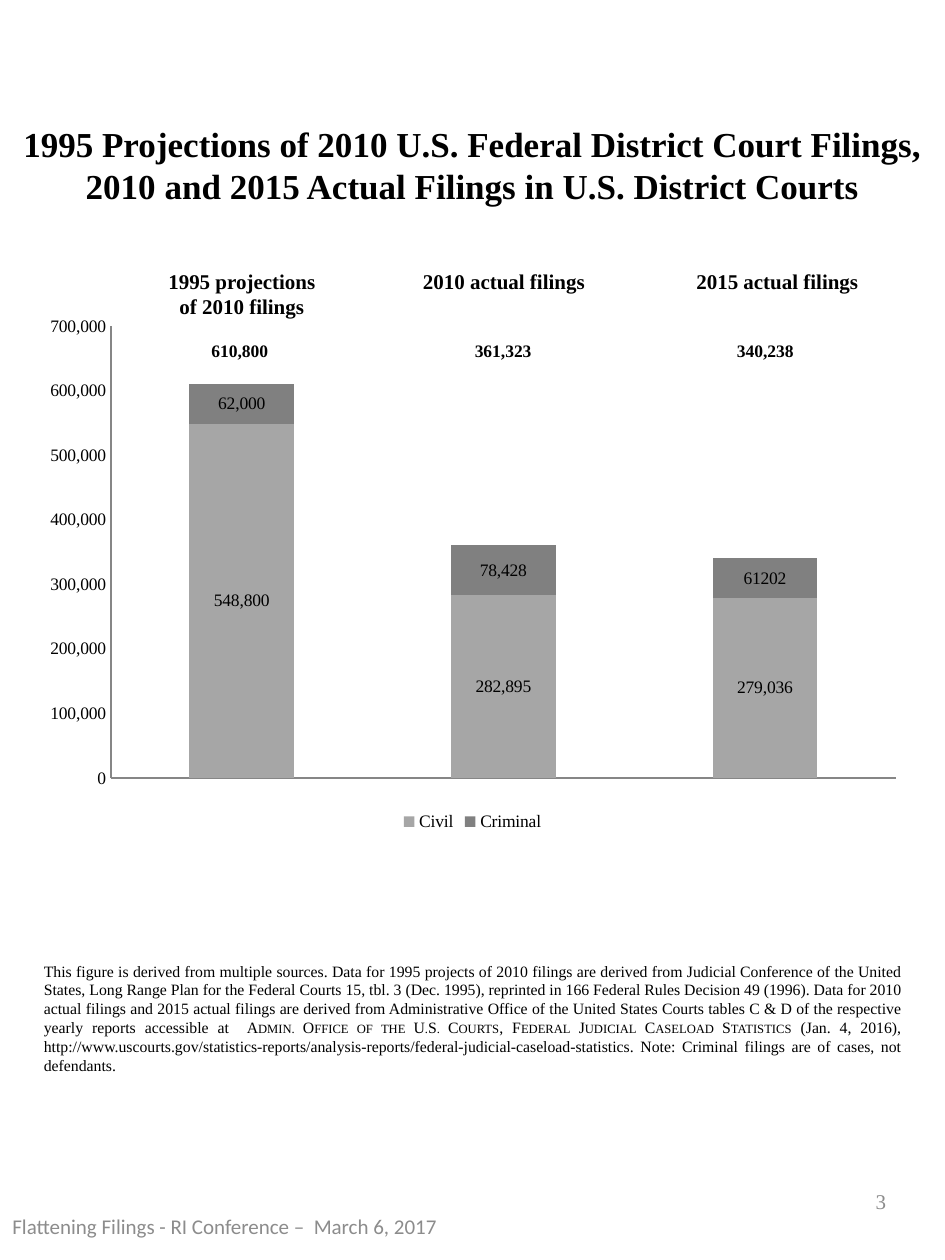
"""Build the slide comparing projected and actual federal district court filings."""
from dataclasses import dataclass
from typing import NamedTuple

from lxml.etree import SubElement
from pptx import Presentation
from pptx.chart.chart import Chart
from pptx.chart.data import CategoryChartData
from pptx.dml.color import RGBColor
from pptx.enum.chart import XL_CHART_TYPE, XL_LEGEND_POSITION, XL_TICK_LABEL_POSITION, XL_TICK_MARK
from pptx.enum.text import MSO_ANCHOR, PP_ALIGN
from pptx.oxml.ns import qn
from pptx.slide import Slide
from pptx.util import Inches, Pt


@dataclass(frozen=True)
class Theme:
    serif: str = "Times New Roman"
    sans: str = "Calibri"
    ink: str = "000000"
    muted: str = "8C8C8C"
    axis: str = "868686"
    title: int = 20
    heading: int = 12
    label: int = 10
    note: int = 9


class Box(NamedTuple):
    left: float
    top: float
    width: float
    height: float


class Run(NamedTuple):
    text: str
    small_caps: bool = False


class Column(NamedTuple):
    heading: str
    total: str
    heading_box: Box
    total_left: float


class Series(NamedTuple):
    name: str
    values: tuple[int, ...]
    color: str
    number_format: str
    point_labels: tuple[str, ...] = ()


THEME = Theme()
COLUMNS = (
    Column("1995 projections of 2010 filings", "610,800", Box(1.17, 2.08, 1.5, 0.71), 1.58),
    Column("2010 actual filings", "361,323", Box(3.25, 2.08, 1.5, 0.67), 3.67),
    Column("2015 actual filings", "340,238", Box(5.42, 2.08, 1.5, 0.67), 5.75),
)
SERIES = (
    Series("Civil", (548800, 282895, 279036), "A6A6A6", "#,##0"),
    Series("Criminal", (62000, 78428, 61202), "808080", "General", ("62,000", "78,428")),
)
TITLE = (
    "1995 Projections of 2010 U.S. Federal District Court Filings,",
    "2010 and 2015 Actual Filings in U.S. District Courts",
)
NOTE = (
    Run(
        "This figure is derived from multiple sources. Data for 1995 projects of 2010 filings are "
        "derived from Judicial Conference of the United States, Long Range Plan for the Federal "
        "Courts 15, tbl. 3 (Dec. 1995), reprinted in 166 Federal Rules Decision 49 (1996). Data for "
        "2010 actual filings and 2015 actual filings are derived from Administrative Office of the "
        "United States Courts tables C & D of the respective yearly reports accessible at  "
    ),
    Run("Admin. Office of the U.S. Courts", True),
    Run(", F"),
    Run("ederal Judicial Caseload Statistics", True),
    Run(
        " (Jan. 4, 2016), http://www.uscourts.gov/statistics-reports/analysis-reports/"
        "federal-judicial-caseload-statistics. Note: Criminal filings are of cases, not defendants."
    ),
)


def style_font(font, size: float, name: str = THEME.serif, color: str = THEME.ink,
               bold: bool = False) -> None:
    """Apply size, typeface, colour and weight to a font."""
    font.size, font.name, font.bold = Pt(size), name, bold
    font.color.rgb = RGBColor.from_string(color)


def add_text(s: Slide, box: Box, *paragraphs: tuple[Run, ...], size: float,
             name: str = THEME.serif, color: str = THEME.ink, bold: bool = False,
             align: PP_ALIGN = PP_ALIGN.LEFT, anchor: MSO_ANCHOR = MSO_ANCHOR.TOP,
             wrap: bool = True) -> None:
    """Add a text box whose paragraphs share one format."""
    tf = s.shapes.add_textbox(*map(Inches, box)).text_frame
    tf.word_wrap, tf.vertical_anchor = wrap, anchor
    for i, runs in enumerate(paragraphs):
        p = tf.add_paragraph() if i else tf.paragraphs[0]
        p.alignment = align
        for run in runs:
            r = p.add_run()
            r.text = run.text
            style_font(r.font, size, name, color, bold)
            if run.small_caps:
                r.font._element.set("cap", "small")


def set_plot_area(chart: Chart, area: Box) -> None:
    """Fix the inner plot area as fractions of the chart."""
    plot_area = chart._chartSpace.chart.plotArea
    layout = plot_area.find(qn("c:layout"))
    if layout is None:
        layout = SubElement(plot_area, qn("c:layout"))
        plot_area.insert(0, layout)
    manual = SubElement(layout, qn("c:manualLayout"))
    settings = {"layoutTarget": "inner", "xMode": "edge", "yMode": "edge",
                **dict(zip("xywh", map(str, area)))}
    for tag, value in settings.items():
        SubElement(manual, qn(f"c:{tag}")).set("val", value)


def style_axes(chart: Chart) -> None:
    """Show a plain value scale and an unlabelled category line."""
    for axis in (chart.category_axis, chart.value_axis):
        axis.major_tick_mark = axis.minor_tick_mark = XL_TICK_MARK.NONE
        axis.has_major_gridlines = False
        axis.format.line.color.rgb = RGBColor.from_string(THEME.axis)
        axis.format.line.width = Pt(0.75)
    chart.category_axis.tick_label_position = XL_TICK_LABEL_POSITION.NONE
    scale = chart.value_axis
    scale.minimum_scale, scale.maximum_scale, scale.major_unit = 0, 700000, 100000
    scale.tick_labels.number_format = "#,##0"
    scale.tick_labels.number_format_is_linked = False
    style_font(scale.tick_labels.font, THEME.label)


def add_filings_chart(s: Slide, box: Box) -> None:
    """Add the stacked columns of civil and criminal filings."""
    data = CategoryChartData()
    data.categories = [str(i + 1) for i in range(len(COLUMNS))]
    for item in SERIES:
        data.add_series(item.name, item.values)
    chart = s.shapes.add_chart(XL_CHART_TYPE.COLUMN_STACKED, *map(Inches, box), data).chart
    style_font(chart.font, THEME.label, THEME.sans)
    chart.has_title = False
    set_plot_area(chart, Box(0.09, 0.04, 0.89, 0.85))
    style_axes(chart)
    chart.has_legend = True
    chart.legend.position = XL_LEGEND_POSITION.BOTTOM
    chart.legend.include_in_layout = False
    style_font(chart.legend.font, THEME.label)
    plot = chart.plots[0]
    plot.gap_width, plot.overlap, plot.vary_by_categories = 150, 100, False
    for item, series in zip(SERIES, plot.series):
        series.format.fill.solid()
        series.format.fill.fore_color.rgb = RGBColor.from_string(item.color)
        labels = series.data_labels
        labels.show_value = True
        labels.number_format, labels.number_format_is_linked = item.number_format, False
        style_font(labels.font, THEME.label)
        for i, text in enumerate(item.point_labels):
            r = series.points[i].data_label.text_frame.paragraphs[0].add_run()
            r.text = text
            style_font(r.font, THEME.label)


def main() -> None:
    """Build and save the slide."""
    prs = Presentation()
    prs.slide_width, prs.slide_height = Inches(7.5), Inches(10)
    s = prs.slides.add_slide(prs.slide_layouts[6])
    add_text(s, Box(0, 0.92, 7.5, 0.77), *((Run(line),) for line in TITLE),
             size=THEME.title, bold=True, align=PP_ALIGN.CENTER)
    add_text(s, Box(0.25, 7.58, 7, 1.01), NOTE, size=THEME.note, align=PP_ALIGN.JUSTIFY)
    add_filings_chart(s, Box(0.25, 2.42, 7, 4.22))
    for column in COLUMNS:
        add_text(s, column.heading_box, (Run(column.heading),),
                 size=THEME.heading, bold=True, align=PP_ALIGN.CENTER)
        add_text(s, Box(column.total_left, 2.65, 0.66, 0.27), (Run(column.total),),
                 size=THEME.label, bold=True, wrap=False)
    add_text(s, Box(5.38, 9.27, 1.75, 0.53), (Run("3"),), size=THEME.heading,
             color=THEME.muted, align=PP_ALIGN.RIGHT, anchor=MSO_ANCHOR.MIDDLE)
    add_text(s, Box(0, 9.47, 4.94, 0.53),
             (Run("Flattening Filings - RI Conference –  March 6, 2017"),), size=THEME.heading,
             name=THEME.sans, color=THEME.muted, anchor=MSO_ANCHOR.MIDDLE)
    prs.save("out.pptx")


if __name__ == "__main__":
    main()
